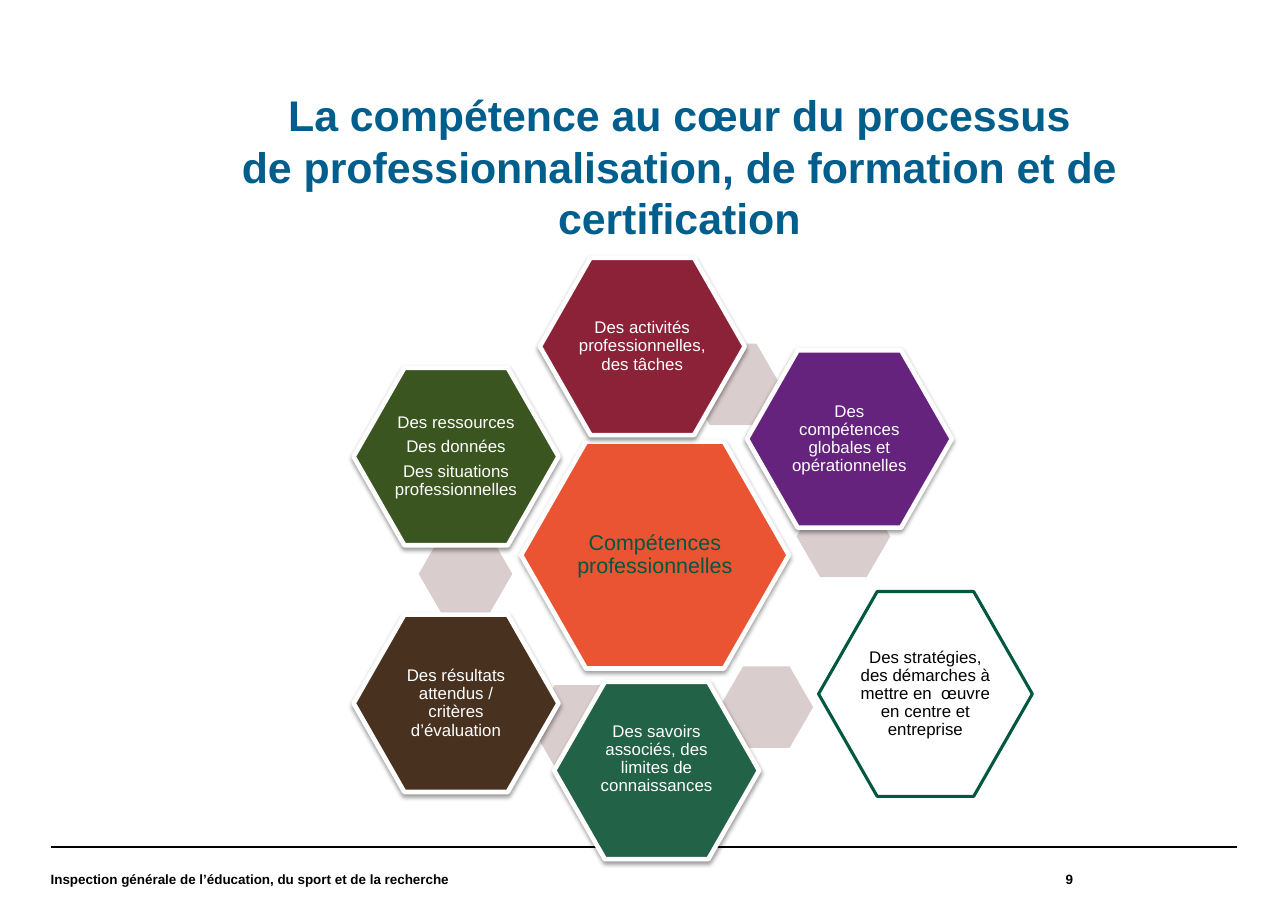
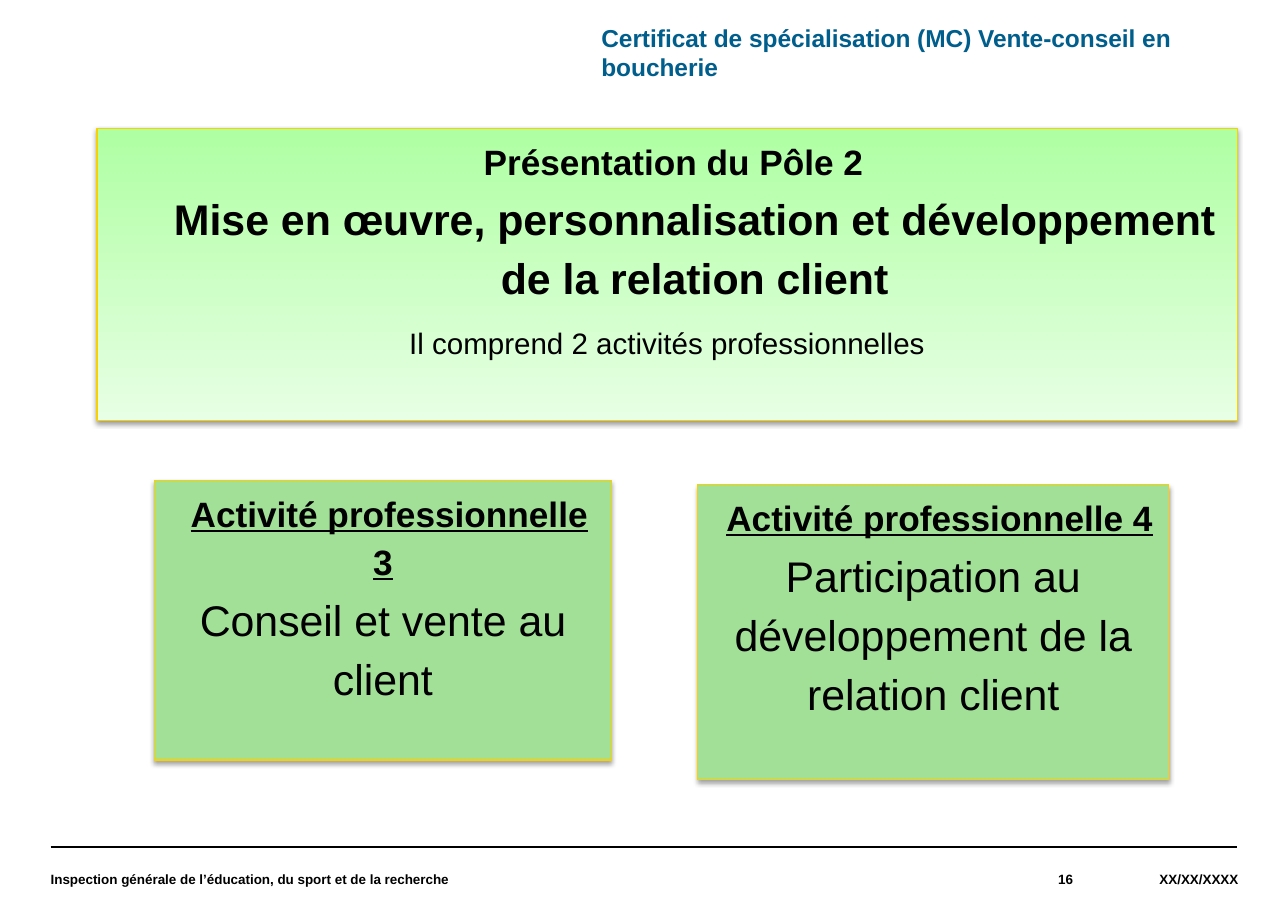
from pptx import Presentation
from pptx.dml.color import RGBColor
from pptx.enum.shapes import MSO_CONNECTOR, MSO_SHAPE
from pptx.enum.text import MSO_ANCHOR, PP_ALIGN as Al
from pptx.oxml.ns import qn
from pptx.util import Inches, Pt
from lxml.etree import SubElement as Sub


class Theme:
    font = "Arial"
    blue, green, black, white = "005E8C", "005841", "000000", "FFFFFF"
    gold, link, orange, card = "F9D000", "DACDCE", "EA5433", "A2E098"
    wine, violet, forest = "8C2237", "65237D", "226247"
    olive, brown = "3B5521", "49311F"
    fade = ("AFFFA3", "E7FFE4")
    foot, node, core, note, head, lead, big = 8.8, 11, 14, 16, 23, 19.3, 28


def draw(slide, at, kind=None, fill=None, line=None, width=0.75,
         shade=None, pad=(0.1, 0.05), mid=False):
    """Add a text box, or a preset shape if kind is given; shade is (opacity %, distance pt)."""
    place = [Inches(n) for n in at]
    if kind is None:
        item = slide.shapes.add_textbox(*place)
    else:
        item = slide.shapes.add_shape(kind, *place)
        if isinstance(fill, tuple):
            item.fill.gradient()
            item.fill.gradient_angle = 270
            for stop, tone in zip(item.fill.gradient_stops, fill):
                stop.color.rgb = RGBColor.from_string(tone)
        else:
            item.fill.solid()
            item.fill.fore_color.rgb = RGBColor.from_string(fill)
        if line:
            item.line.color.rgb = RGBColor.from_string(line)
            item.line.width = Pt(width)
        else:
            item.line.fill.background()
        item.shadow.inherit = False
        if shade:
            alpha, dist = shade
            glow = Sub(item._element.spPr.find(qn("a:effectLst")), qn("a:outerShdw"),
                       blurRad=str(Pt(3.1)), dist=str(Pt(dist)), dir="5400000",
                       algn="ctr", rotWithShape="0")
            tone = Sub(glow, qn("a:srgbClr"), val=Theme.black)
            Sub(tone, qn("a:alpha"), val=str(alpha * 1000))
    frame = item.text_frame
    frame.word_wrap = True
    frame.margin_left = frame.margin_right = Inches(pad[0])
    frame.margin_top = frame.margin_bottom = Inches(pad[1])
    frame.vertical_anchor = MSO_ANCHOR.MIDDLE if mid else MSO_ANCHOR.TOP
    return item


def write(item, text, size, color=Theme.black, bold=False, under=False,
          align=Al.CENTER, space=None, before=0, after=0, left=0, first=0):
    """Append one paragraph to the text of item."""
    frame = item.text_frame
    para = frame.add_paragraph() if frame.text else frame.paragraphs[0]
    para.alignment = align
    para.line_spacing = space
    para.space_before, para.space_after = Pt(before), Pt(after)
    props = para._p.get_or_add_pPr()
    props.set("marL", str(Inches(left)))
    props.set("indent", str(Inches(first)))
    run = para.add_run()
    run.text = text
    font = run.font
    font.name, font.size = Theme.font, Pt(size)
    font.bold, font.underline = bold, under
    font.color.rgb = RGBColor.from_string(color)


deck = Presentation()
deck.slide_width, deck.slide_height = Inches(11.69), Inches(8.27)

# Shared footer
pages = []
for number, date in (("9", None), ("16", "XX/XX/XXXX")):
    page = deck.slides.add_slide(deck.slide_layouts[6])
    pages.append(page)
    rule = page.shapes.add_connector(MSO_CONNECTOR.STRAIGHT, Inches(0.46), Inches(7.69),
                                     Inches(11.23), Inches(7.69))
    rule.line.color.rgb = RGBColor.from_string(Theme.black)
    rule.line.width = Pt(0.8)
    Sub(rule._element.spPr, qn("a:effectLst"))
    for text, left, width, align in (
            ("Inspection générale de l’éducation, du sport et de la recherche",
             0.46, 7.55, Al.LEFT),
            (number, 8.01, 1.73, Al.RIGHT),
            (date, 9.74, 1.5, Al.RIGHT)):
        if text:
            foot = draw(page, (left, 7.69, width, 0.58), pad=(0, 0), mid=True)
            write(foot, text, Theme.foot, bold=True, align=align)
cycle, pole = pages

# Hexagon cycle
title = draw(cycle, (0.99, 0.76, 10.35, 1.51))
for text in ("La compétence au cœur du processus",
             "de professionnalisation, de formation et de certification"):
    write(title, text, Theme.big, Theme.blue, bold=True)

hexa = dict(kind=MSO_SHAPE.HEXAGON, pad=(0.02, 0.02), mid=True)
ring = dict(hexa, line=Theme.white, width=3, shade=(38, 1.6))
core = draw(cycle, (4.73, 4.01, 2.43, 2.06), fill=Theme.orange, **ring)
core.adjustments[0] = 0.286
write(core, "Compétences professionnelles", Theme.core, Theme.green, space=0.9, after=4.9)

nodes = (
    ((6.23, 3.12), (4.9, 2.34), Theme.wine,
     ["Des activités professionnelles, des tâches"]),
    ((7.23, 4.5), (6.78, 3.18), Theme.violet,
     ["Des compétences globales et opérationnelles"]),
    ((6.53, 6.05), (7.43, 5.37), Theme.white,
     ["Des stratégies, des démarches à mettre en  œuvre en centre et entreprise"]),
    ((4.82, 6.22), (5.03, 6.19), Theme.forest,
     ["Des savoirs associés, des limites de connaissances"]),
    ((3.8, 4.84), (3.21, 3.34), Theme.olive,
     ["Des ressources", "Des données", "Des situations professionnelles"]),
    (None, (3.21, 5.58), Theme.brown,
     ["Des résultats attendus / critères d’évaluation"]),
)
for link, spot, fill, lines in nodes:
    if link:
        tie = draw(cycle, (*link, 0.85, 0.74), MSO_SHAPE.HEXAGON, Theme.link)
        tie.adjustments[0] = 0.289
    plain = fill == Theme.white
    size = (1.94, 1.86) if plain else (1.86, 1.61)
    style = dict(hexa, line=Theme.green, width=2) if plain else ring
    node = draw(cycle, (*spot, *size), fill=fill, **style)
    node.adjustments[0] = 0.286
    if fill == Theme.forest:
        node.text_frame.margin_bottom = Inches(0.23)
    for text in lines:
        write(node, text, Theme.node, Theme.black if plain else Theme.white,
              space=0.9, after=3.85)

# Pole 2
rect = dict(kind=MSO_SHAPE.RECTANGLE, line=Theme.gold)
panel = draw(pole, (0.88, 1.17, 10.35, 2.65), fill=Theme.fade, shade=(38, 1.6), **rect)
write(panel, "Présentation du Pôle 2", Theme.head, bold=True, space=1.15,
      after=1.1, first=0.12)
for text, after in (("Mise en œuvre, personnalisation et développement", 0),
                    ("de la relation client", 10)):
    write(panel, text, Theme.big, bold=True, space=1.15, after=after, left=0.5)
write(panel, "Il comprend 2 activités professionnelles", Theme.lead, space=1.15,
      before=1.1, after=1.1)

for at, name, text in (
        ((1.4, 4.36, 4.15, 2.54), "Activité professionnelle 3",
         "Conseil et vente au client"),
        ((6.33, 4.4, 4.28, 2.68), "Activité professionnelle 4",
         "Participation au développement de la relation client")):
    card = draw(pole, at, fill=Theme.card, shade=(35, 1.8), **rect)
    write(card, name, Theme.head, bold=True, under=True, space=1.15, after=1.1, first=0.12)
    write(card, text, Theme.big, space=1.15, before=1.1, after=1.1)

label = draw(pole, (5.36, 0.16, 5.84, 0.64))
write(label, "Certificat de spécialisation (MC) Vente-conseil en boucherie",
      Theme.note, Theme.blue, bold=True, align=Al.LEFT)

deck.save("out.pptx")
